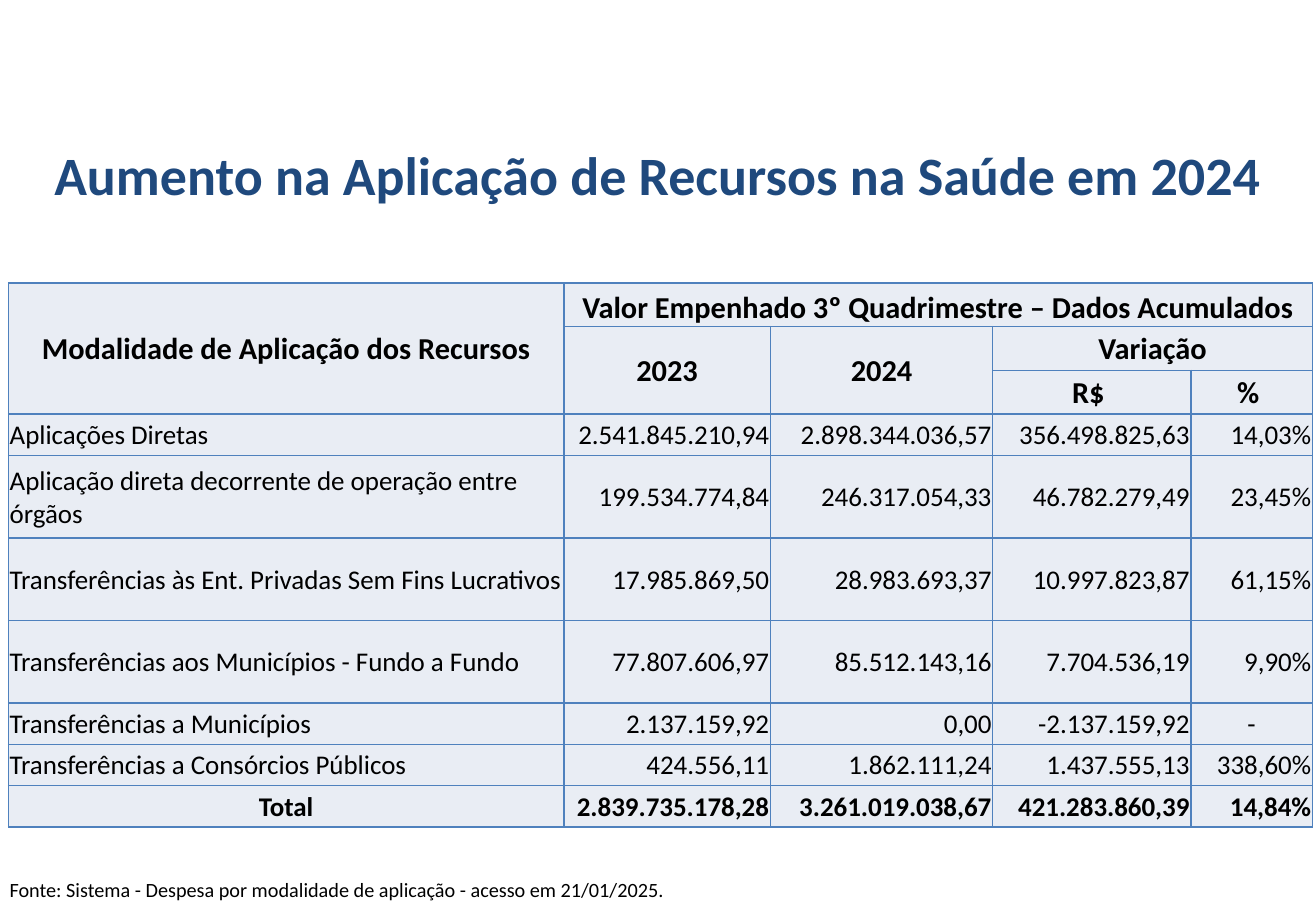
from lxml import etree
from pptx import Presentation
from pptx.dml.color import RGBColor
from pptx.enum.text import MSO_ANCHOR, MSO_AUTO_SIZE, PP_ALIGN
from pptx.oxml.ns import qn
from pptx.util import Inches, Pt

LEFT, MID, RIGHT = PP_ALIGN.LEFT, PP_ALIGN.CENTER, PP_ALIGN.RIGHT
CENTER, BOTTOM = MSO_ANCHOR.MIDDLE, MSO_ANCHOR.BOTTOM
GROW = MSO_AUTO_SIZE.SHAPE_TO_FIT_TEXT
FONT = "Calibri"
COLORS = {"title": "1F497D", "text": "000000", "fill": "E9EDF4", "line": "4F81BD"}
COLS = [4.57, 1.7, 1.83, 1.63, 1]
ROWS = [0.36] * 3 + [0.34] + [0.68] * 3 + [0.34] * 3
HEADS = [
    (0, 0, 2, 0, "Modalidade de Aplicação dos Recursos"),
    (0, 1, 0, 4, "Valor Empenhado 3º Quadrimestre – Dados Acumulados"),
    (1, 1, 2, 1, "2023"),
    (1, 2, 2, 2, "2024"),
    (1, 3, 1, 4, "Variação"),
    (2, 3, 2, 3, "R$ "),
    (2, 4, 2, 4, "% "),
]
DATA = [
    ("Aplicações Diretas", "2.541.845.210,94", "2.898.344.036,57", "356.498.825,63", "14,03%"),
    ("Aplicação direta decorrente de operação entre órgãos",
     "199.534.774,84", "246.317.054,33", "46.782.279,49", "23,45%"),
    ("Transferências às Ent. Privadas Sem Fins Lucrativos",
     "17.985.869,50", "28.983.693,37", "10.997.823,87", "61,15%"),
    ("Transferências aos Municípios - Fundo a Fundo",
     "77.807.606,97", "85.512.143,16", "7.704.536,19", "9,90%"),
    ("Transferências a Municípios", "2.137.159,92", "0,00", "-2.137.159,92", "-"),
    ("Transferências a Consórcios Públicos",
     "424.556,11", "1.862.111,24", "1.437.555,13", "338,60%"),
    ("Total", "2.839.735.178,28", "3.261.019.038,67", "421.283.860,39", "14,84%"),
]


def write(frame, text, size, align, color="text", bold=False):
    """Add one styled run to the first paragraph and return the paragraph."""
    para = frame.paragraphs[0]
    para.alignment = align
    run = para.add_run()
    run.text = text
    font = run.font
    font.name, font.size, font.bold = FONT, Pt(size), bold
    font.color.rgb = RGBColor.from_string(COLORS[color])
    return para


def add_text(slide, box, text, size, align, color="text", bold=False):
    """Place a wrapped text box and return its paragraph."""
    frame = slide.shapes.add_textbox(*map(Inches, box)).text_frame
    frame.word_wrap = True
    frame.auto_size = GROW
    return write(frame, text, size, align, color, bold)


def style(cell):
    """Set the fill, margins and borders of a cell."""
    cell.fill.solid()
    cell.fill.fore_color.rgb = RGBColor.from_string(COLORS["fill"])
    cell.vertical_anchor = CENTER
    cell.margin_left = cell.margin_right = cell.margin_top = Inches(0.01)
    cell.margin_bottom = 0
    props = cell._tc.get_or_add_tcPr()
    for spot, side in enumerate(("lnL", "lnR", "lnT", "lnB")):
        line = etree.Element(qn(f"a:{side}"), w=str(Pt(1)))
        fill = etree.SubElement(line, qn("a:solidFill"))
        etree.SubElement(fill, qn("a:srgbClr"), val=COLORS["line"])
        props.insert(spot, line)


def add_grid(slide, box):
    """Place the table of spending by type."""
    grid = slide.shapes.add_table(len(ROWS), len(COLS), *map(Inches, box)).table
    for col, width in zip(grid.columns, COLS):
        col.width = Inches(width)
    for row, height in zip(grid.rows, ROWS):
        row.height = Inches(height)
    for cell in grid.iter_cells():
        style(cell)
    for top, left, end, last, text in HEADS:
        cell = grid.cell(top, left)
        if (top, left) != (end, last):
            cell.merge(grid.cell(end, last))
        write(cell.text_frame, text, 18, MID, bold=True)
    grid.cell(0, 1).vertical_anchor = BOTTOM
    for r, record in enumerate(DATA, 3):
        total = record[0] == "Total"
        for c, text in enumerate(record):
            align = RIGHT if c else LEFT
            if text in ("Total", "-"):
                align = MID
            write(grid.cell(r, c).text_frame, text, 16, align, bold=total)


def main():
    """Build and save the slide."""
    deck = Presentation()
    deck.slide_width, deck.slide_height = Inches(10.83), Inches(7.5)
    slide = deck.slides.add_slide(deck.slide_layouts[6])
    title = add_text(slide, (0.1, 1.18, 10.63, 0.59),
                     "Aumento na Aplicação de Recursos na Saúde em 2024",
                     32, MID, "title", True)
    title.line_spacing = 0.9
    add_text(slide, (-0.02, 7.17, 10.22, 0.3),
             "Fonte: Sistema - Despesa por modalidade de aplicação - acesso em 21/01/2025.",
             12, LEFT)
    add_grid(slide, (0.07, 2.33, sum(COLS), sum(ROWS)))
    deck.save("out.pptx")


if __name__ == "__main__":
    main()
